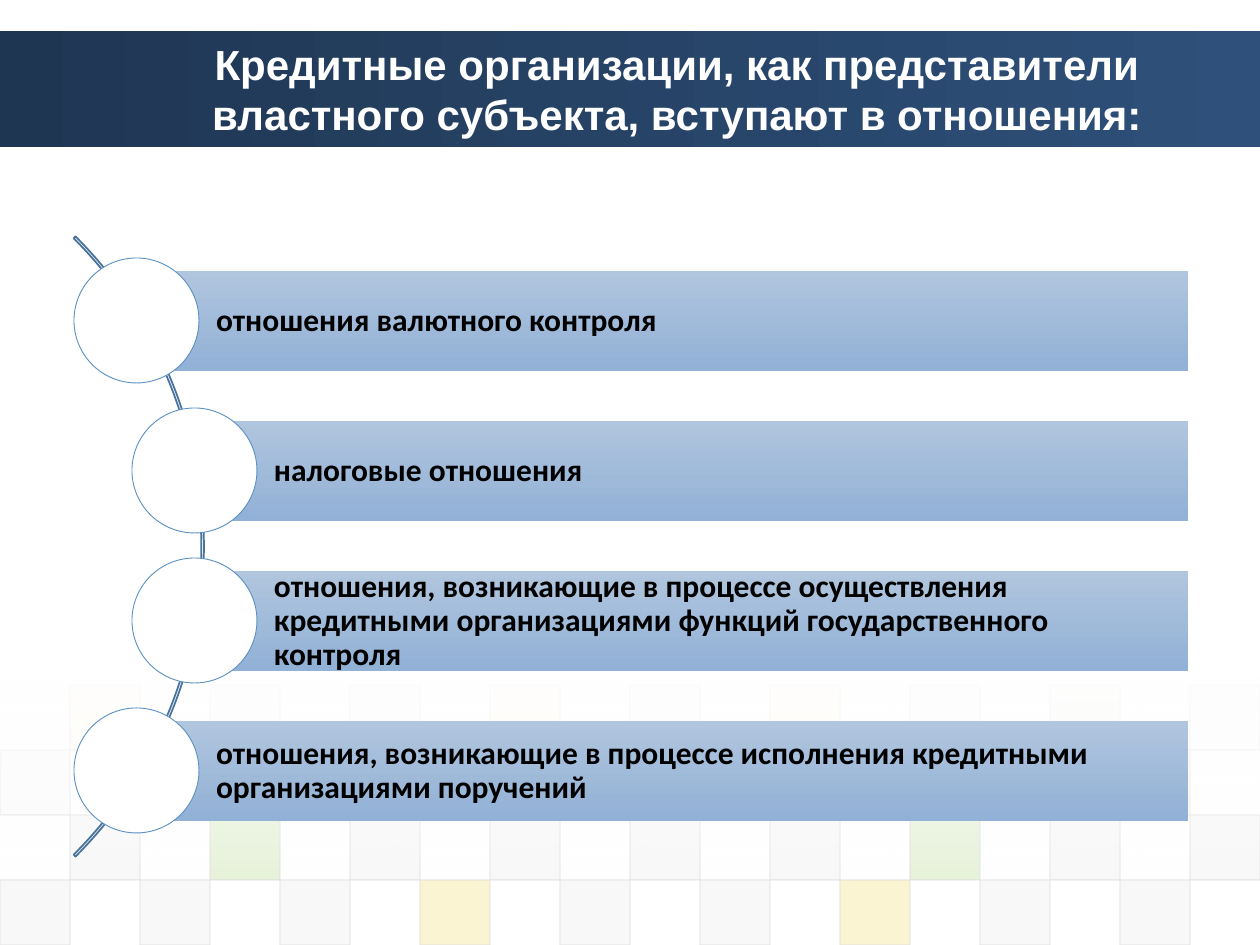
import lxml.etree
import pptx
import pptx.dml.color
import pptx.enum.shapes
import pptx.enum.text
import pptx.oxml.ns
import pptx.util

EMU_PER_PX = 914400 / 126
SHAPES = pptx.enum.shapes.MSO_SHAPE
ALIGN = pptx.enum.text.PP_ALIGN
ANCHOR = pptx.enum.text.MSO_ANCHOR


def px(*lengths):
    return [pptx.util.Emu(round(length * EMU_PER_PX)) for length in lengths]


def add_shape(kind, box, fills=(), angle=0, line=None, width=1, opacities=()):
    """Add a shape; two fills make a gradient, opacities go fill first, then line."""
    color = pptx.dml.color.RGBColor.from_string
    shape = slide.shapes.add_shape(kind, *px(*box))
    shape.shadow.inherit = False
    if len(fills) == 2:
        shape.fill.gradient()
        shape.fill.gradient_angle = angle
        for stop, fill in zip(shape.fill.gradient_stops, fills):
            stop.color.rgb = color(fill)
    elif fills:
        shape.fill.solid()
        shape.fill.fore_color.rgb = color(fills[0])
    else:
        shape.fill.background()
    if line:
        shape.line.color.rgb = color(line)
        shape.line.width = pptx.util.Pt(width)
    else:
        shape.line.fill.background()
    color_nodes = list(shape._element.spPr.iter(pptx.oxml.ns.qn("a:srgbClr")))
    for node, opacity in zip(color_nodes, opacities):
        alpha = lxml.etree.SubElement(node, pptx.oxml.ns.qn("a:alpha"))
        alpha.set("val", str(opacity * 1000))
    return shape


presentation = pptx.Presentation()
presentation.slide_width, presentation.slide_height = px(1260, 945)
slide = presentation.slides.add_slide(presentation.slide_layouts[6])

# Title band
add_shape(SHAPES.RECTANGLE, (0, 31, 1260, 116), ["1F3653", "2E507A"])

# Checkerboard: first column, opacity and tile colours of each row
tile_colors = {"L": "EAEAEA", "D": "DDDDDD", "G": "8AC246", "Y": "EFC821"}
tile_rows = [
    (1, 5, "YLLYDYLGL"),
    (0, 10, "DDDDGDDDY"),
    (1, 20, "DGDDDDGDD"),
    (0, 20, "DDDYDDYDD"),
]
for row, (first_column, opacity, tiles) in enumerate(tile_rows):
    for index, tile in enumerate(tiles):
        left = 70 * (first_column + 2 * index)
        add_shape(SHAPES.RECTANGLE, (left, 685 + 65 * row, 70, 65), [tile_colors[tile]],
                  line="DDDDDD", width=0.75, opacities=(opacity, 60))

# White veil over the checkerboard
add_shape(SHAPES.RECTANGLE, (0, 677, 1260, 204), ["FFFFFF", "FFFFFF"],
          angle=270, opacities=(90, 0))

# Title
title = slide.shapes.add_textbox(*px(168, 31, 1018, 116))
title.text_frame.word_wrap = True
title.text_frame.vertical_anchor = ANCHOR.MIDDLE
paragraph = title.text_frame.paragraphs[0]
paragraph.text = "Кредитные организации, как представители властного субъекта, вступают в отношения:"
paragraph.alignment = ALIGN.CENTER
paragraph.font.name = "Arial"
paragraph.font.size = pptx.util.Pt(24)
paragraph.font.bold = True
paragraph.font.color.rgb = pptx.dml.color.RGBColor.from_string("FFFFFF")

# Arc behind the list
arc = add_shape(SHAPES.BLOCK_ARC, (-673, 108, 877, 877), line="48739B")
for index, value in enumerate((189, 27, 0.003)):
    arc.adjustments[index] = value

# List bars with a circle centred on each left end
items = [
    (136, "отношения валютного контроля"),
    (194, "налоговые отношения"),
    (194, "отношения, возникающие в процессе осуществления кредитными "
          "организациями функций государственного контроля"),
    (136, "отношения, возникающие в процессе исполнения кредитными организациями поручений"),
]
for index, (left, text) in enumerate(items):
    top = 271 + 150 * index
    bar = add_shape(SHAPES.RECTANGLE, (left, top, 1188 - left, 100),
                    ["B0C5DE", "92B1D6"], angle=270)
    frame = bar.text_frame
    frame.word_wrap = True
    frame.vertical_anchor = ANCHOR.MIDDLE
    frame.margin_left, frame.margin_top, frame.margin_right, frame.margin_bottom = px(80, 6, 6, 6)
    paragraph = frame.paragraphs[0]
    paragraph.text = text
    paragraph.alignment = ALIGN.LEFT
    paragraph.line_spacing = 0.9
    paragraph.font.name = "Calibri"
    paragraph.font.size = pptx.util.Pt(18)
    paragraph.font.bold = True
    paragraph.font.color.rgb = pptx.dml.color.RGBColor.from_string("000000")
    add_shape(SHAPES.OVAL, (left - 62, top - 13, 125, 125), ["FFFFFF"],
              line="5A90C2", width=0.5)

presentation.save("out.pptx")
